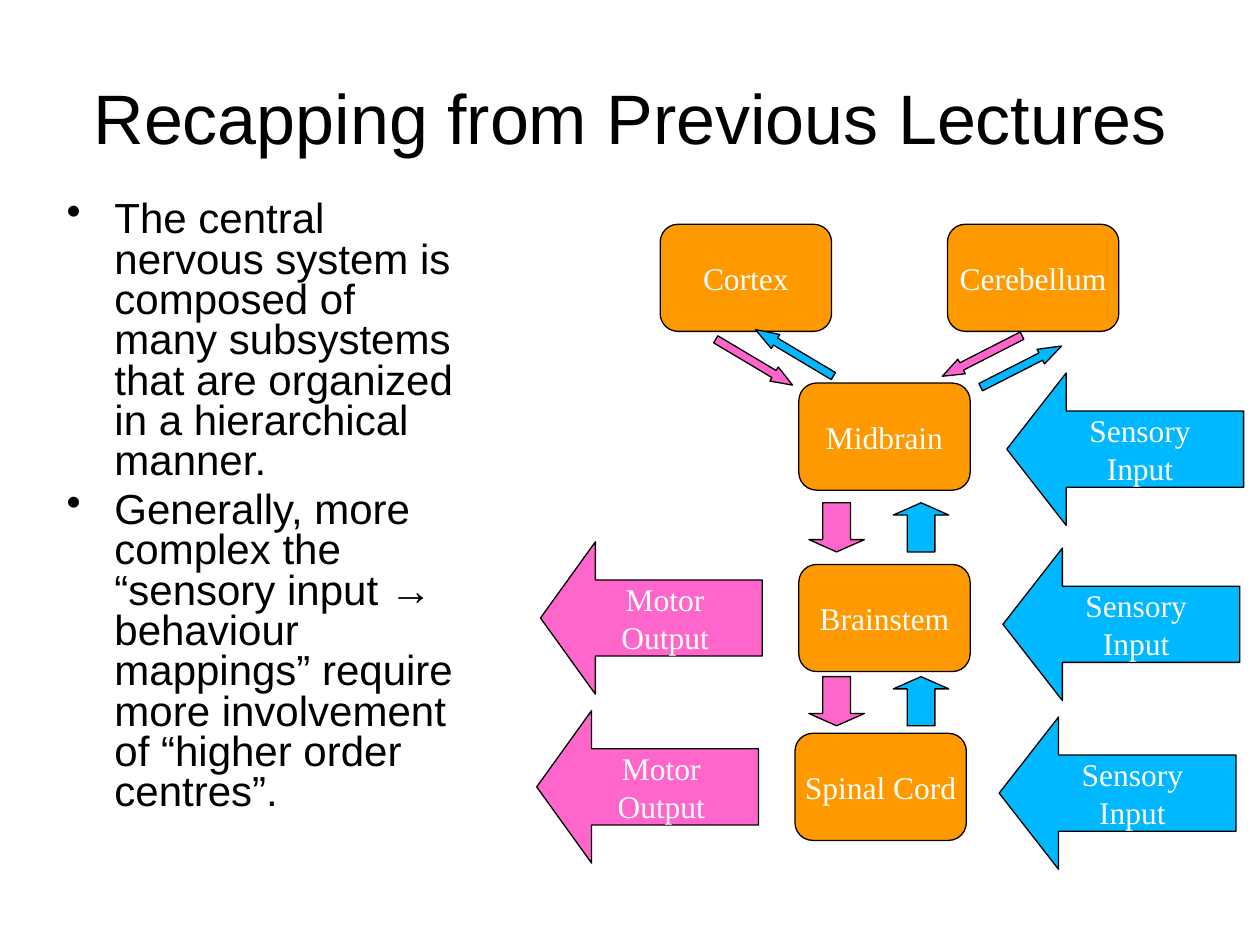
import pptx
import pptx.util
import pptx.dml.color
import pptx.enum.shapes
import pptx.enum.text
import pptx.oxml

Inches = pptx.util.Inches
Pt = pptx.util.Pt
SHAPE = pptx.enum.shapes.MSO_SHAPE
ALIGN = pptx.enum.text.PP_ALIGN
ANCHOR = pptx.enum.text.MSO_ANCHOR

BLACK, WHITE = "000000", "FFFFFF"
ORANGE, BLUE, PINK = "FF9900", "00B8FF", "FF66CC"

BULLETS = [
    "The central nervous system is composed of many subsystems that are organized in a hierarchical manner.",
    "Generally, more complex the “sensory input → behaviour mappings” require more involvement of “higher order centres”.",
]
CENTRES = [
    ("Spinal Cord", 2.05, 4.04),
    ("Brainstem", 2.08, 2.7),
    ("Midbrain", 2.08, 1.26),
    ("Cortex", 0.98, 0),
    ("Cerebellum", 3.26, 0),
]
SENSORY_INPUTS = [(3.67, 3.91), (3.7, 2.57), (3.73, 1.18)]
MOTOR_OUTPUTS = [(0, 3.86), (0.03, 2.52)]
PATHWAY_ROWS = [2.21, 3.59]
DIAGONAL_PATHWAYS = [
    (3.78, 0.77, 0.72, 63, BLUE, 1.43),
    (3.47, 0.69, 0.71, 243, PINK, 1.32),
    (1.98, 0.66, 0.72, 300.8, BLUE, 1.43),
    (1.66, 0.74, 0.71, 120.8, PINK, 1.32),
]


def color(value):
    return pptx.dml.color.RGBColor.from_string(value)


def style_font(paragraph, name, size, value):
    for run in paragraph.runs:
        run.font.name = name
        run.font.size = Pt(size)
        run.font.color.rgb = color(value)


def add_text_frame(slide, box):
    text_frame = slide.shapes.add_textbox(*map(Inches, box)).text_frame
    text_frame.word_wrap = True
    return text_frame


def add_title(slide, box, text):
    text_frame = add_text_frame(slide, box)
    text_frame.vertical_anchor = ANCHOR.MIDDLE
    text_frame.text = text
    paragraph = text_frame.paragraphs[0]
    paragraph.alignment = ALIGN.CENTER
    style_font(paragraph, "Arial", 40, BLACK)


def add_bullets(slide, box, items):
    text_frame = add_text_frame(slide, box)
    text_frame.text = "\n".join(items)
    for index, paragraph in enumerate(text_frame.paragraphs):
        paragraph.line_spacing = 0.8
        paragraph.space_before = Pt(4.8 if index else 0)
        properties = paragraph._p.get_or_add_pPr()
        properties.set("marL", str(Inches(0.38)))
        properties.set("indent", str(Inches(-0.38)))
        bullet = pptx.oxml.parse_xml(
            '<a:buChar xmlns:a="http://schemas.openxmlformats.org/drawingml/2006/main" char="•"/>'
        )
        properties.append(bullet)
        style_font(paragraph, "Arial", 24, BLACK)


def add_figure(slide, kind, box, fill, adjustments=(), text="", rotation=0):
    shape = slide.shapes.add_shape(kind, *map(Inches, box))
    shape.shadow.inherit = False
    shape.fill.solid()
    shape.fill.fore_color.rgb = color(fill)
    shape.line.color.rgb = color(BLACK)
    shape.line.width = Pt(0.75)
    shape.rotation = rotation
    for index, value in enumerate(adjustments):
        shape.adjustments[index] = value
    if text:
        text_frame = shape.text_frame
        text_frame.word_wrap = False
        text_frame.vertical_anchor = ANCHOR.MIDDLE
        text_frame.text = text
        for paragraph in text_frame.paragraphs:
            paragraph.alignment = ALIGN.CENTER
            style_font(paragraph, "Times New Roman", 18, WHITE)


def add_hierarchy(slide, left, top):
    for name, x, y in CENTRES:
        add_figure(slide, SHAPE.FLOWCHART_ALTERNATE_PROCESS,
                   (left + x, top + y, 1.36, 0.85), ORANGE, text=name)
    for x, y in SENSORY_INPUTS:
        add_figure(slide, SHAPE.LEFT_ARROW, (left + x, top + y, 1.88, 1.21),
                   BLUE, (0.5, 0.39), "Sensory\nInput")
    for x, y in MOTOR_OUTPUTS:
        add_figure(slide, SHAPE.LEFT_ARROW, (left + x, top + y, 1.76, 1.21),
                   PINK, (0.5, 0.36), "Motor\vOutput")
    for y in PATHWAY_ROWS:
        for kind, x, fill in ((SHAPE.UP_ARROW, 2.83, BLUE), (SHAPE.DOWN_ARROW, 2.16, PINK)):
            add_figure(slide, kind, (left + x, top + y, 0.44, 0.39), fill, (0.5, 0.25))
    for x, y, length, rotation, fill, head in DIAGONAL_PATHWAYS:
        add_figure(slide, SHAPE.UP_ARROW, (left + x, top + y, 0.13, length),
                   fill, (0.5, head), rotation=rotation)


def main():
    presentation = pptx.Presentation()
    presentation.slide_width = Inches(10)
    presentation.slide_height = Inches(7.5)
    slide = presentation.slides.add_slide(presentation.slide_layouts[6])
    add_title(slide, (0.5, 0.3, 9, 1.25), "Recapping from Previous Lectures")
    add_bullets(slide, (0.43, 1.55, 3.39, 5.2), BULLETS)
    add_hierarchy(slide, 4.26, 1.78)
    presentation.save("out.pptx")


if __name__ == "__main__":
    main()
